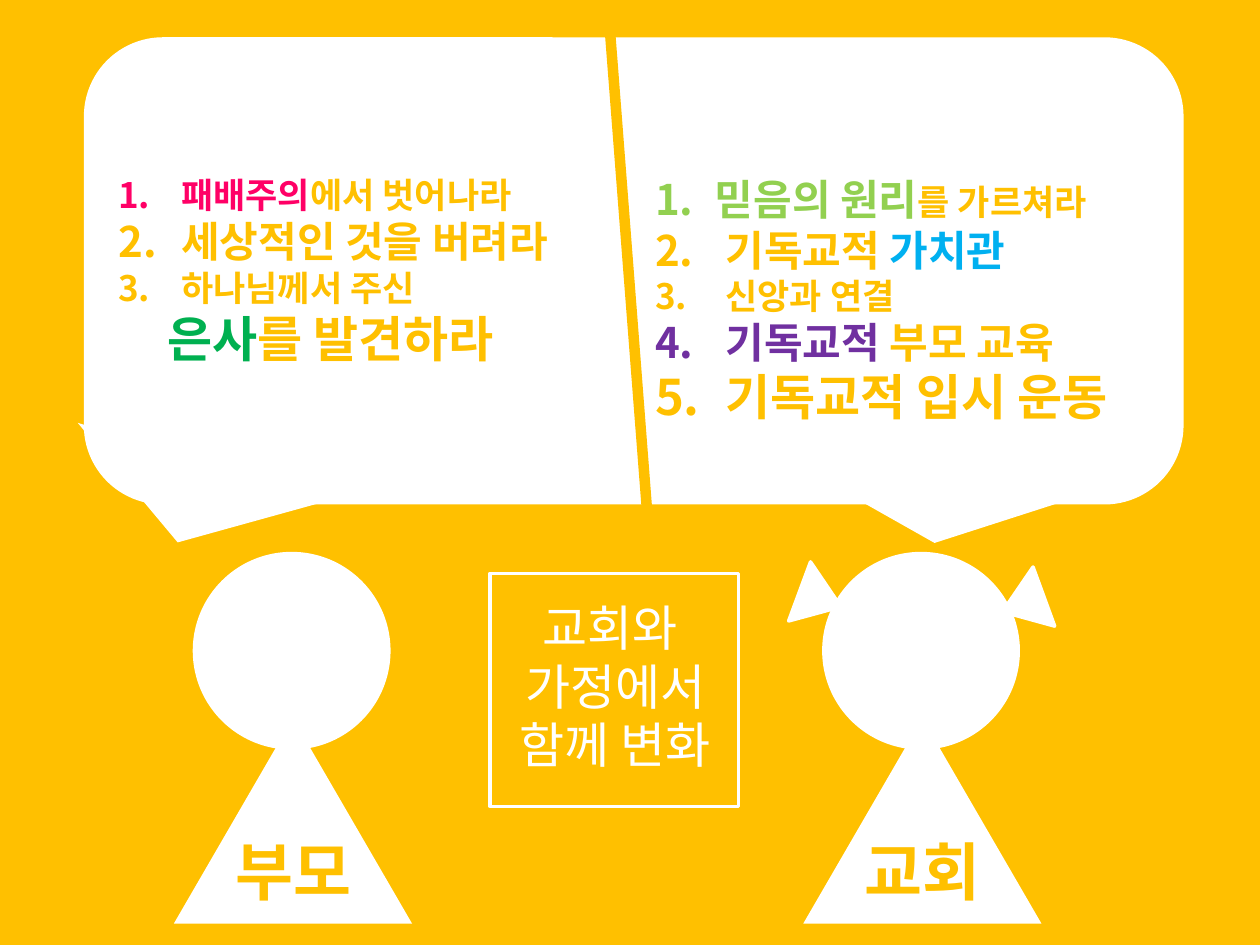
import pptx
import pptx.util
from pptx.dml.color import RGBColor
from pptx.enum.shapes import MSO_CONNECTOR, MSO_SHAPE
from pptx.enum.text import MSO_AUTO_SIZE, PP_ALIGN
from pptx.oxml.xmlchemy import OxmlElement

FONT = "Arial"
GOLD, WHITE, PINK, GREEN = "FFC000", "FFFFFF", "FF0066", "00B050"
LIME, BLUE, PURPLE = "92D050", "00B0F0", "7030A0"
UNIT = 0.1  # grid of 100 columns by 75 rows


def grid(*cells):
    return [pptx.util.Inches(c * UNIT) for c in cells]


def colour(target, value):
    """Give a fill, or the font of a run, a hex colour."""
    if hasattr(target, "solid"):
        target.solid()
        target = target.fore_color
    else:
        target = target.color
    target.rgb = RGBColor.from_string(value)


def add_shape(s, kind, box, fill=WHITE, line=None, angle=0):
    sp = s.shapes.add_shape(kind, *grid(*box))
    sp.shadow.inherit = False
    sp.rotation = angle
    if fill:
        colour(sp.fill, fill)
    else:
        sp.fill.background()
    if line:
        colour(sp.line.fill, line)
        sp.line.width = pptx.util.Pt(2)
    else:
        sp.line.fill.background()
    return sp


def add_line(s, ends, value, width):
    sp = s.shapes.add_connector(MSO_CONNECTOR.STRAIGHT, *grid(*ends))
    colour(sp.line.fill, value)
    sp.line.width = pptx.util.Pt(width)
    sp._element.spPr.append(OxmlElement("a:effectLst"))


def add_runs(p, runs, bold):
    for text, size, value in runs:
        r = p.add_run()
        r.text = text
        r.font.name = FONT
        r.font.size = pptx.util.Pt(size)
        r.font.bold = bold
        colour(r.font, value)


def indent(p, left, numbered):
    """Set the left margin in columns, with a hanging number if wanted."""
    pPr = p._p.get_or_add_pPr()
    margin = grid(left)[0]
    pPr.set("marL", str(margin))
    pPr.set("indent", str(-margin if numbered else 0))
    if numbered:
        bullet = OxmlElement("a:buAutoNum")
        bullet.set("type", "arabicPeriod")
        pPr.append(bullet)


def add_text(s, box, paragraphs, align=PP_ALIGN.LEFT, bold=True):
    """Each paragraph is (left margin or None, numbered, runs)."""
    tf = s.shapes.add_textbox(*grid(*box)).text_frame
    tf.word_wrap = False
    tf.auto_size = MSO_AUTO_SIZE.SHAPE_TO_FIT_TEXT
    for i, (left, numbered, runs) in enumerate(paragraphs):
        p = tf.add_paragraph() if i else tf.paragraphs[0]
        p.alignment = align
        if left is not None:
            indent(p, left, numbered)
        add_runs(p, runs, bold)


def add_person(s, x, label):
    add_shape(s, MSO_SHAPE.OVAL, (x + 1.5, 43.8, 15.7, 15.7))
    add_shape(s, MSO_SHAPE.ISOSCELES_TRIANGLE, (x, 57, 18.9, 16.3))
    add_text(s, (x + 3.45, 65.6, 12.1, 7.1),
             [(None, False, [(label, 36, GOLD)])], PP_ALIGN.CENTER)


def main():
    prs = pptx.Presentation()
    prs.slide_width, prs.slide_height = grid(100, 75)
    s = prs.slides.add_slide(prs.slide_layouts[6])
    colour(s.background.fill, GOLD)
    triangle = MSO_SHAPE.ISOSCELES_TRIANGLE

    # Parents and church, the latter with pigtails
    add_person(s, 13.8, "부모")
    add_person(s, 63.75, "교회")
    for x, y, angle in ((78.7, 46.2, 249.9), (62.6, 45.8, 110.3)):
        add_shape(s, triangle, (x, y, 5, 3.5), line=WHITE, angle=angle)

    # Shared speech bubble with two tails and a divider
    add_shape(s, MSO_SHAPE.ROUNDED_RECTANGLE, (6.8, 3.1, 87, 36.8), line=WHITE)
    add_shape(s, triangle, (4.7, 36.5, 20.8, 6.7), angle=197.3)
    add_shape(s, triangle, (63.9, 38.5, 21, 4.6), angle=185.8)
    add_line(s, (48.4, 2.3, 51.8, 46.3), GOLD, 6)

    # What the parents change
    add_text(s, (8.4, 13.3, 39.6, 16.5), [
        (5, True, [("패배주의", 20, PINK), ("에서 벗어나라", 20, GOLD)]),
        (5, True, [("세상적인 것을 버려라", 24, GOLD)]),
        (5, True, [("하나님께서 주신", 20, GOLD)]),
        (3.9, False, [("은사", 28, GREEN), ("를 발견하라", 28, GOLD)]),
    ])

    # What the church changes
    add_text(s, (51, 13.3, 41.8, 21.9), [
        (4.75, True, [("믿음의 원리", 24, LIME), ("를 가르쳐라", 20, GOLD)]),
        (5.6, True, [("기독교적 ", 24, GOLD), ("가치관", 24, BLUE)]),
        (5.6, True, [("신앙과 연결", 20, GOLD)]),
        (5.6, True, [("기독교적 ", 24, PURPLE), ("부모 교육", 24, GOLD)]),
        (5.6, True, [("기독교적 입시 운동", 28, GOLD)]),
    ])

    # Framed message between the two
    message = ("교회와 ", "가정에서", "함께 변화")
    add_text(s, (39.3, 46.9, 19.1, 15.1),
             [(None, False, [(text, 28, WHITE)]) for text in message],
             PP_ALIGN.CENTER, bold=False)
    add_shape(s, MSO_SHAPE.RECTANGLE, (38.9, 45.5, 19.7, 18.5),
              fill=None, line=WHITE)

    prs.save("out.pptx")


if __name__ == "__main__":
    main()
